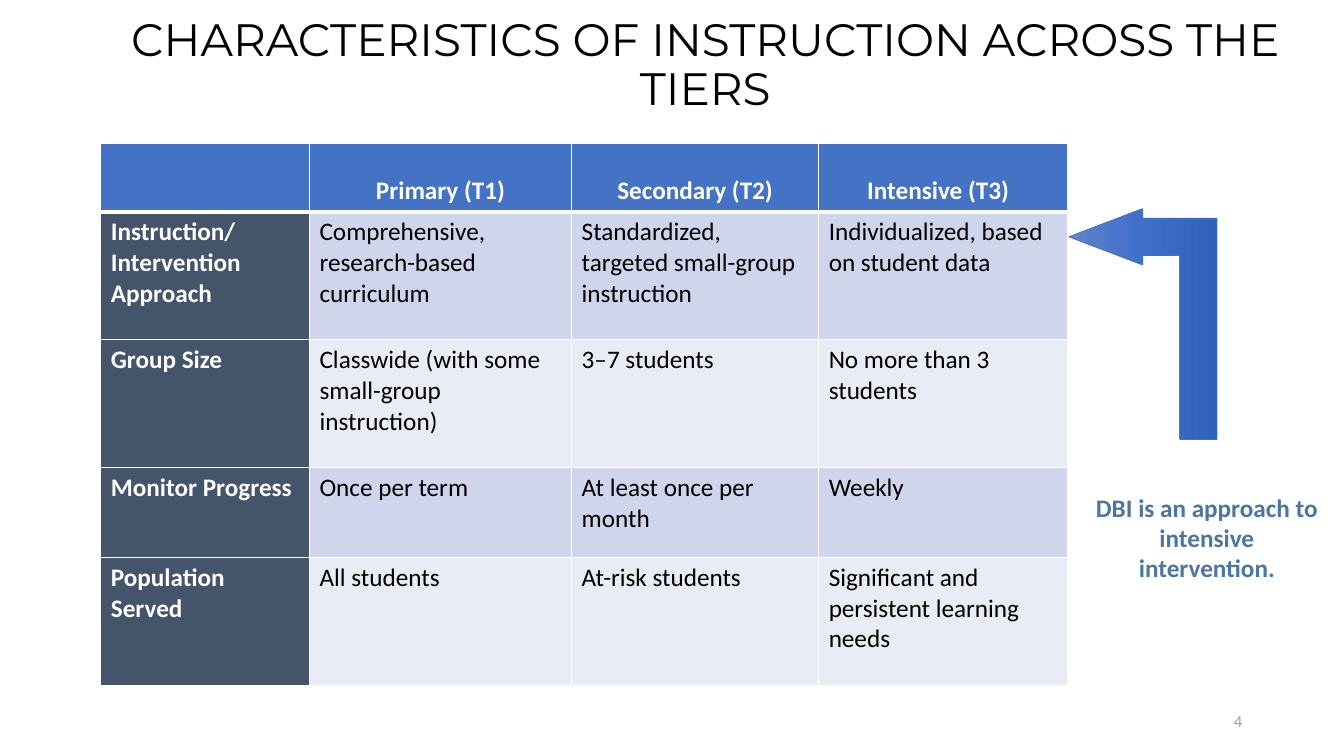
from copy import deepcopy

from lxml.etree import SubElement
from pptx import Presentation
from pptx.dml.color import RGBColor
from pptx.enum.shapes import MSO_SHAPE
from pptx.enum.text import MSO_ANCHOR, MSO_AUTO_SIZE, PP_ALIGN
from pptx.oxml.ns import qn
from pptx.util import Inches, Pt

COLORS = {
    "text": "000000", "white": "FFFFFF", "header": "4472C4", "label": "44546A",
    "band_dark": "CFD5EA", "band_light": "E9EBF5", "note": "4B76A0",
    "number": "9F9F9F", "arrow_light": "6183CB", "arrow_mid": "3E70CA",
    "arrow_dark": "3062BB",
}


def rgb(name):
    return RGBColor.from_string(COLORS[name])


def write(frame, text, size=18, font="Calibri", color="text", bold=False,
          align=PP_ALIGN.LEFT, spacing=None):
    paragraph = frame.paragraphs[0]
    paragraph.text = text
    paragraph.alignment = align
    if spacing:
        paragraph.line_spacing = spacing
    for run in paragraph.runs:
        run.font.size = Pt(size)
        run.font.name = font
        run.font.bold = bold
        run.font.color.rgb = rgb(color)


class TierSlide:
    def __init__(self, deck):
        self.slide = deck.slides.add_slide(deck.slide_layouts[5])

    def title(self, text, box):
        title = self.slide.shapes.title
        title.left, title.top, title.width, title.height = map(Inches, box)
        frame = title.text_frame
        frame.word_wrap = True
        frame.auto_size = MSO_AUTO_SIZE.NONE
        frame.vertical_anchor = MSO_ANCHOR.MIDDLE
        write(frame, text, size=32.4, font="Montserrat",
              align=PP_ALIGN.CENTER, spacing=0.9)

    def text(self, text, box, anchor=MSO_ANCHOR.TOP, **style):
        frame = self.slide.shapes.add_textbox(*map(Inches, box)).text_frame
        frame.word_wrap = True
        frame.vertical_anchor = anchor
        write(frame, text, **style)

    def borders(self, cell, bottom=1, top=1):
        properties = cell._tc.get_or_add_tcPr()
        for side, width in (("L", 1), ("R", 1), ("T", top), ("B", bottom)):
            line = SubElement(properties, qn(f"a:ln{side}"), w=str(Pt(width)))
            fill = SubElement(line, qn("a:solidFill"))
            SubElement(fill, qn("a:srgbClr"), val=COLORS["white"])

    def table(self, rows, box, widths, heights):
        table = self.slide.shapes.add_table(
            len(rows), len(widths), *map(Inches, box)).table
        for column, width in zip(table.columns, widths):
            column.width = Inches(width)
        for row, height in zip(table.rows, heights):
            row.height = Inches(height)
        for r, row in enumerate(rows):
            for c, text in enumerate(row):
                cell = table.cell(r, c)
                header, label = r == 0, c == 0
                self.borders(cell, bottom=3 if header else 1,
                             top=3 if r == 1 else 1)
                if header:
                    fill = "header"
                elif label:
                    fill = "label"
                else:
                    fill = "band_dark" if r % 2 else "band_light"
                cell.fill.solid()
                cell.fill.fore_color.rgb = rgb(fill)
                if header:
                    cell.vertical_anchor = MSO_ANCHOR.BOTTOM
                write(cell.text_frame, text, bold=header or label,
                      color="white" if header or label else "text",
                      align=PP_ALIGN.CENTER if header else PP_ALIGN.LEFT)
        return table

    def bent_arrow(self, box, adjustments, stops):
        arrow = self.slide.shapes.add_shape(
            MSO_SHAPE.BENT_UP_ARROW, *map(Inches, box))
        arrow.rotation = 270
        arrow.shadow.inherit = False
        for i, value in enumerate(adjustments):
            arrow.adjustments[i] = value
        arrow.line.color.rgb = rgb("header")
        arrow.line.width = Pt(0.5)
        arrow.fill.gradient()
        arrow.fill.gradient_angle = 270
        # The default gradient has two stops, so add the middle one
        first_stop = arrow.element.spPr.find(".//" + qn("a:gs"))
        first_stop.addnext(deepcopy(first_stop))
        for i, (stop, color) in enumerate(zip(arrow.fill.gradient_stops, stops)):
            stop.position = i / (len(stops) - 1)
            stop.color.rgb = rgb(color)


TIER_ROWS = [
    ["", "Primary (T1)", "Secondary (T2)", "Intensive (T3)"],
    ["Instruction/\nIntervention Approach".replace("\n", "\v"),
     "Comprehensive, research-based curriculum",
     "Standardized, targeted small-group instruction",
     "Individualized, based on student data"],
    ["Group Size", "Classwide (with some small-group instruction)",
     "3–7 students", "No more than 3 students"],
    ["Monitor Progress", "Once per term", "At least once per month", "Weekly"],
    ["Population Served", "All students", "At-risk students",
     "Significant and persistent learning needs"],
]


def main():
    deck = Presentation()
    deck.slide_width, deck.slide_height = Inches(13.33), Inches(7.5)
    tiers = TierSlide(deck)

    # Title
    tiers.title("CHARACTERISTICS OF INSTRUCTION ACROSS THE TIERS",
                (1, 0.39, 11.99, 0.54))

    # Comparison of the tiers
    comparison = tiers.table(TIER_ROWS, (1, 1.42, 9.6, 5.37),
                             widths=(2.07, 2.6, 2.45, 2.47),
                             heights=(0.68, 1.27, 1.27, 0.89, 1.27))
    comparison.cell(0, 3).margin_right = Inches(0.2)

    # Arrow from the note to the intensive tier
    tiers.bent_arrow((10.19, 2.48, 2.29, 1.47), (0.25, 0.19, 0.5),
                     ("arrow_light", "arrow_mid", "arrow_dark"))
    tiers.text("DBI is an approach to intensive intervention.",
               (10.75, 4.83, 2.44, 1.72), color="note", bold=True,
               align=PP_ALIGN.CENTER)

    # Slide number
    tiers.text("4", (9.42, 6.95, 3, 0.4), anchor=MSO_ANCHOR.MIDDLE, size=12,
               color="number", align=PP_ALIGN.RIGHT)

    deck.save("out.pptx")


if __name__ == "__main__":
    main()
